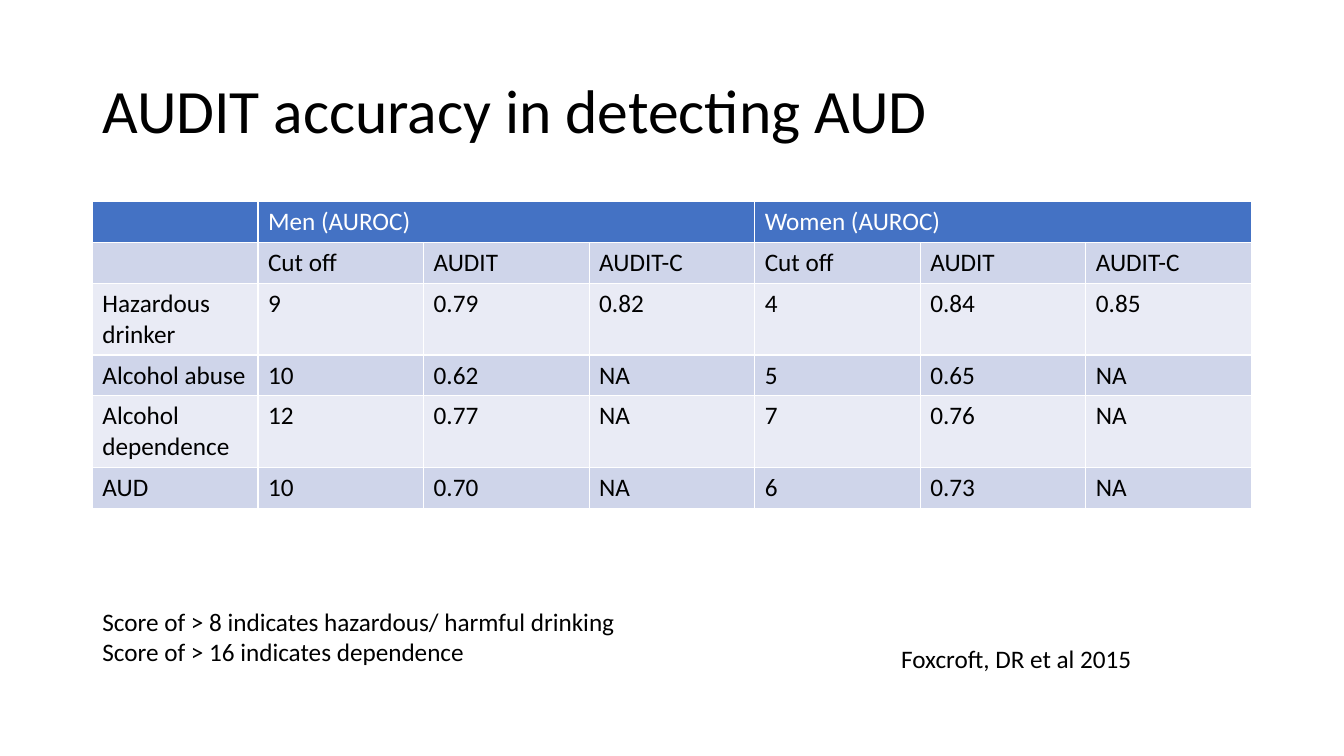
"""Build a slide on how accurately AUDIT detects alcohol use disorder."""
from dataclasses import dataclass

import lxml.etree
import pptx
import pptx.dml.color
import pptx.enum.text
import pptx.oxml.ns
import pptx.slide
import pptx.table
import pptx.text.text
import pptx.util

RGBColor = pptx.dml.color.RGBColor
BLACK = RGBColor(0x00, 0x00, 0x00)
WHITE = RGBColor(0xFF, 0xFF, 0xFF)
BLUE = RGBColor(0x44, 0x72, 0xC4)
BAND_DARK = RGBColor(0xCF, 0xD5, 0xEA)
BAND_LIGHT = RGBColor(0xE9, 0xEB, 0xF5)

FONT = "Calibri"
BODY_SIZE = 18
GRID_COLS, GRID_ROWS = 160, 90
SLIDE_W, SLIDE_H = pptx.util.Inches(13.33), pptx.util.Inches(7.5)
LEFT, WIDTH = 11, 138
TABLE_TOP = 24
LINE_ROW, TWO_LINE_ROW = 4.86, 8.5


@dataclass(frozen=True)
class TextBlock:
    lines: tuple[str, ...]
    left: float
    top: float
    width: float
    height: float
    size: int = BODY_SIZE
    wrap: bool = False
    spacing: float = 1.0
    anchor: pptx.enum.text.MSO_ANCHOR = pptx.enum.text.MSO_ANCHOR.TOP


@dataclass(frozen=True)
class TableRow:
    values: tuple[str, ...]
    height: float = LINE_ROW


TEXTS = (
    TextBlock(("AUDIT accuracy in detecting AUD",), LEFT, 4.8, WIDTH, 17.4, size=44,
              wrap=True, spacing=0.9, anchor=pptx.enum.text.MSO_ANCHOR.MIDDLE),
    TextBlock(("Foxcroft, DR et al 2015",), 106.1, 76, 30.2, 4.8),
    TextBlock(("Score of > 8 indicates hazardous/ harmful drinking",
               "Score of > 16 indicates dependence"), LEFT, 71.6, 64.1, 8.5),
)

MEASURES = ("Cut off", "AUDIT", "AUDIT-C")
GROUPS = ("Men (AUROC)", "Women (AUROC)")
ROWS = (
    TableRow(("",) + tuple(text for group in GROUPS for text in (group, "", ""))),
    TableRow(("",) + MEASURES * len(GROUPS)),
    TableRow(("Hazardous drinker", "9", "0.79", "0.82", "4", "0.84", "0.85"), TWO_LINE_ROW),
    TableRow(("Alcohol abuse", "10", "0.62", "NA", "5", "0.65", "NA")),
    TableRow(("Alcohol dependence", "12", "0.77", "NA", "7", "0.76", "NA"), TWO_LINE_ROW),
    TableRow(("AUD", "10", "0.70", "NA", "6", "0.73", "NA")),
)


def x(cols: float) -> pptx.util.Emu:
    """Convert grid columns to a length."""
    return pptx.util.Emu(round(SLIDE_W * cols / GRID_COLS))


def y(rows: float) -> pptx.util.Emu:
    """Convert grid rows to a length."""
    return pptx.util.Emu(round(SLIDE_H * rows / GRID_ROWS))


def add_run(p: pptx.text.text._Paragraph, text: str, size: int, color: RGBColor) -> None:
    """Append one styled run to a paragraph."""
    r = p.add_run()
    r.text = text
    r.font.name = FONT
    r.font.size = pptx.util.Pt(size)
    r.font.bold = False
    r.font.color.rgb = color


def add_text(s: pptx.slide.Slide, block: TextBlock) -> None:
    """Draw a text block, one paragraph per line."""
    sp = s.shapes.add_textbox(x(block.left), y(block.top), x(block.width), y(block.height))
    tf = sp.text_frame
    tf.word_wrap = block.wrap
    tf.vertical_anchor = block.anchor
    if not block.wrap:
        tf.auto_size = pptx.enum.text.MSO_AUTO_SIZE.SHAPE_TO_FIT_TEXT
    for i, line in enumerate(block.lines):
        p = tf.add_paragraph() if i else tf.paragraphs[0]
        p.line_spacing = block.spacing
        add_run(p, line, block.size, BLACK)


def add_borders(cell: pptx.table._Cell) -> None:
    """Give a cell thin white borders on all sides."""
    qn = pptx.oxml.ns.qn
    tc_pr = cell._tc.get_or_add_tcPr()
    for side in ("a:lnL", "a:lnR", "a:lnT", "a:lnB"):
        ln = lxml.etree.SubElement(tc_pr, qn(side), w=str(pptx.util.Pt(1)))
        fill = lxml.etree.SubElement(ln, qn("a:solidFill"))
        lxml.etree.SubElement(fill, qn("a:srgbClr"), val=str(WHITE))


def add_accuracy_table(s: pptx.slide.Slide) -> None:
    """Draw the accuracy table with its merged group headings."""
    n_cols = len(ROWS[0].values)
    height = sum(row.height for row in ROWS)
    table = s.shapes.add_table(len(ROWS), n_cols, x(LEFT), y(TABLE_TOP),
                               x(WIDTH), y(height)).table
    for column in table.columns:
        column.width = x(WIDTH / n_cols)
    for i, row in enumerate(ROWS):
        table.rows[i].height = y(row.height)
        band = BAND_DARK if i % 2 else BAND_LIGHT
        for j, text in enumerate(row.values):
            cell = table.cell(i, j)
            add_borders(cell)
            cell.fill.solid()
            cell.fill.fore_color.rgb = band if i else BLUE
            if text:
                add_run(cell.text_frame.paragraphs[0], text, BODY_SIZE, BLACK if i else WHITE)
    span = len(MEASURES)
    for first in range(1, n_cols, span):
        table.cell(0, first).merge(table.cell(0, first + span - 1))


def main() -> None:
    """Assemble and save the slide."""
    prs = pptx.Presentation()
    prs.slide_width, prs.slide_height = SLIDE_W, SLIDE_H
    s = prs.slides.add_slide(prs.slide_layouts[6])
    add_accuracy_table(s)
    for block in TEXTS:
        add_text(s, block)
    prs.save("out.pptx")


if __name__ == "__main__":
    main()
